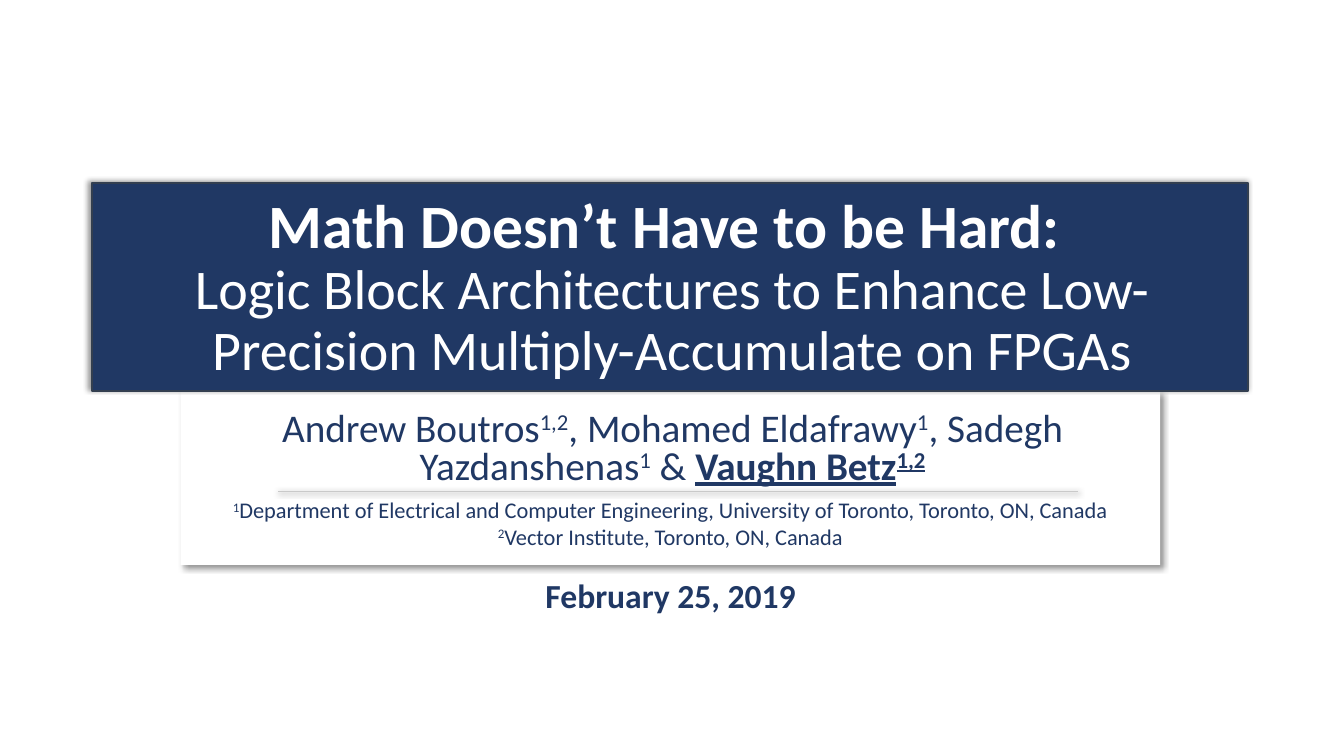
from lxml import etree
from pptx import Presentation
from pptx import util as u
from pptx.dml.color import RGBColor
from pptx.enum import shapes, text
from pptx.oxml.ns import qn

COLORS = {"navy": "203864", "slate": "333F50", "white": "FFFFFF",
          "rule": "C9C9C9", "shadow": "000000"}
BREAK = ("\v", {})
SUP = {"sup": True}
SPEAKER = {"bold": True, "underline": True}


def px(length):
    return u.Emu(length * 9525)


def color(name):
    return RGBColor.from_string(COLORS[name])


class TitleSlide:
    font = "Calibri"

    def __init__(self, deck):
        self.slide = deck.slides.add_slide(deck.slide_layouts[6])

    def cast_shadow(self, item, distance, angle):
        """Add a soft outer shadow; call after fill and line are set."""
        effects = etree.SubElement(item._element.spPr, qn("a:effectLst"))
        shadow = etree.SubElement(
            effects, qn("a:outerShdw"), blurRad=str(u.Pt(4)), dist=str(u.Pt(distance)),
            dir=str(angle * 60000), rotWithShape="0")
        tint = etree.SubElement(shadow, qn("a:srgbClr"), val=COLORS["shadow"])
        etree.SubElement(tint, qn("a:alpha"), val="40000")

    def panel(self, left, top, width, height, fill, angle, line=None):
        panel = self.slide.shapes.add_shape(
            shapes.MSO_SHAPE.RECTANGLE, px(left), px(top), px(width), px(height))
        panel.fill.solid()
        panel.fill.fore_color.rgb = color(fill)
        if line:
            panel.line.color.rgb = color(line)
            panel.line.width = u.Pt(1.5)
        else:
            panel.line.fill.background()
        self.cast_shadow(panel, 3, angle)

    def rule(self, left, right, y):
        rule = self.slide.shapes.add_connector(
            shapes.MSO_CONNECTOR.STRAIGHT, px(left), px(y), px(right), px(y))
        rule.line.color.rgb = color("rule")
        rule.line.width = u.Pt(0.75)
        self.cast_shadow(rule, 1, 90)

    def text(self, left, top, width, height, paragraphs, size, ink="navy",
             align="CENTER", anchor="TOP", spacing=1.0, before=0, wrap=True):
        """Add a text box; each paragraph is a list of (words, style) spans."""
        box = self.slide.shapes.add_textbox(px(left), px(top), px(width), px(height))
        frame = box.text_frame
        frame.word_wrap = wrap
        frame.vertical_anchor = getattr(text.MSO_ANCHOR, anchor)
        frame.text = "\n".join("" for _ in paragraphs)
        for para, spans in zip(frame.paragraphs, paragraphs):
            para.alignment = getattr(text.PP_ALIGN, align)
            para.line_spacing = spacing
            para.space_before = u.Pt(before)
            for words, style in spans:
                if (words, style) == BREAK:
                    para.add_line_break()
                    continue
                span = para.add_run()
                span.text = words
                span.font.name = self.font
                span.font.size = u.Pt(style.get("size", size))
                span.font.color.rgb = color(ink)
                span.font.bold = style.get("bold", False)
                span.font.underline = style.get("underline", False)
                if style.get("sup"):
                    span.font._element.set("baseline", "30000")


def main():
    deck = Presentation()
    deck.slide_width, deck.slide_height = px(1280), px(720)
    page = TitleSlide(deck)

    page.panel(172, 373, 933, 165, "white", angle=45)
    page.panel(88, 174, 1101, 198, "navy", angle=225, line="slate")

    title = [("Math Doesn’t Have to be Hard: ", {"size": 44, "bold": True}), BREAK,
             ("Logic Block Architectures to Enhance Low-Precision "
              "Multiply-Accumulate on FPGAs", {})]
    page.text(160, 118, 960, 251, [title], 40, ink="white", anchor="BOTTOM", spacing=0.9)

    authors = [("Andrew Boutros", {}), ("1,2", SUP), (", Mohamed Eldafrawy", {}), ("1", SUP),
               (", Sadegh Yazdanshenas", {}), ("1", SUP), (" & ", {}),
               ("Vaughn Betz", SPEAKER), ("1,2", SPEAKER | SUP)]
    page.text(175, 388, 931, 84, [authors], 28, spacing=0.8, before=10)

    affiliations = ["Department of Electrical and Computer Engineering, "
                    "University of Toronto, Toronto, ON, Canada",
                    "Vector Institute, Toronto, ON, Canada"]
    page.text(172, 468, 933, 61,
              [[(str(number), SUP), (name, {})]
               for number, name in enumerate(affiliations, 1)], 16)
    page.rule(265, 1027, 468)

    page.text(510, 543, 260, 48, [[("February 25, 2019", {"bold": True})]], 24,
              align="LEFT", wrap=False)
    deck.save("out.pptx")


if __name__ == "__main__":
    main()
